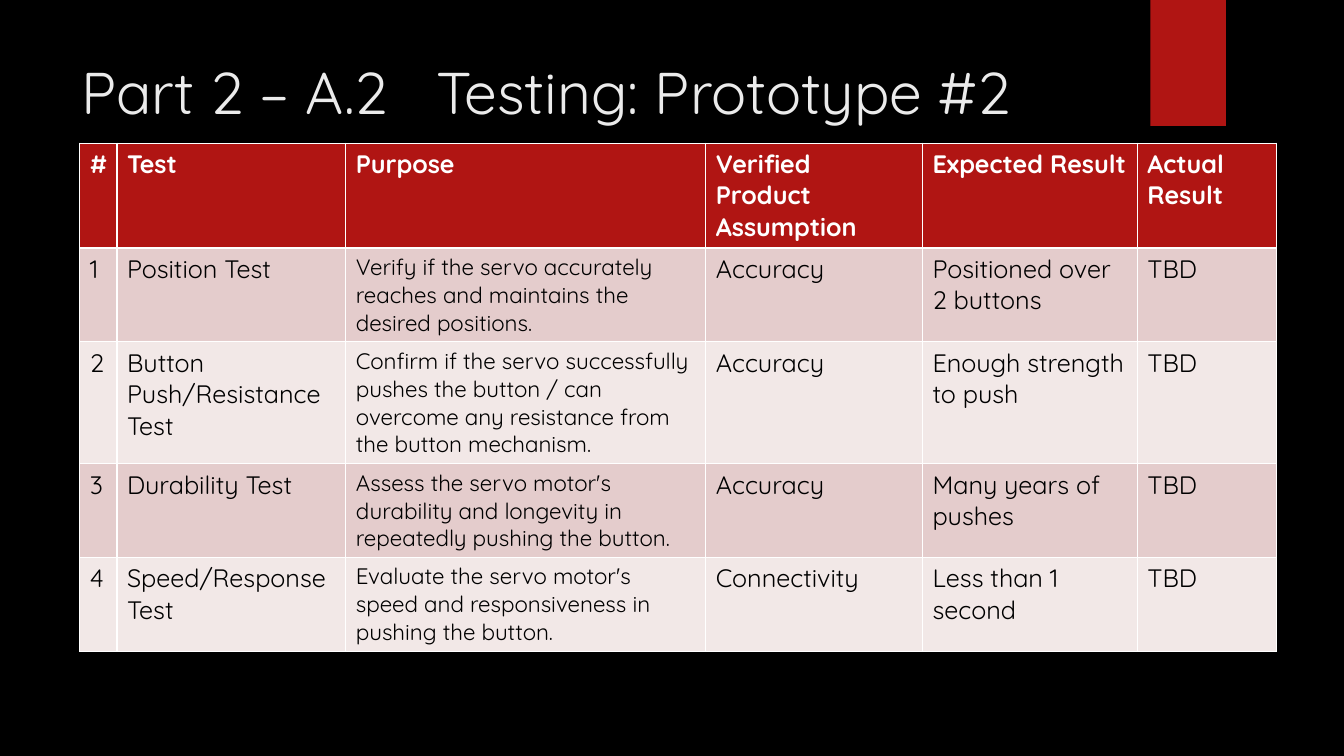
import pptx
import pptx.dml.color
import pptx.enum.shapes
import pptx.enum.text
import pptx.util
from pptx.util import Inches

FONT = "Quicksand"
RED = "B01513"
BANDS = ["E4CCCC", "F2E8E7"]
PURPOSE_COLUMN = 2

column_widths = [0.37, 2.27, 3.57, 2.15, 2.13, 1.38]
row_heights = [1.04, 0.93, 1.21, 0.93, 0.93]
rows = [
    ["#", "Test", "Purpose", "Verified Product Assumption", "Expected Result", "Actual Result"],
    ["1", "Position Test",
     "Verify if the servo accurately reaches and maintains the desired positions.",
     "Accuracy", "Positioned over 2 buttons", "TBD"],
    ["2", "Button Push/Resistance Test",
     "Confirm if the servo successfully pushes the button / can overcome any resistance "
     "from the button mechanism.",
     "Accuracy", "Enough strength to push", "TBD"],
    ["3", "Durability Test",
     "Assess the servo motor's durability and longevity in repeatedly pushing the button.",
     "Accuracy", "Many years of pushes", "TBD"],
    ["4", "Speed/Response Test",
     "Evaluate the servo motor's speed and responsiveness in pushing the button.",
     "Connectivity", "Less than 1 second", "TBD"],
]


def set_fill(target, color):
    target.fill.solid()
    target.fill.fore_color.rgb = pptx.dml.color.RGBColor.from_string(color)


def set_font(paragraph, size, color, bold=False):
    paragraph.font.name = FONT
    paragraph.font.size = pptx.util.Pt(size)
    paragraph.font.bold = bold
    paragraph.font.color.rgb = pptx.dml.color.RGBColor.from_string(color)


deck = pptx.Presentation()
deck.slide_width = Inches(13.33)
deck.slide_height = Inches(7.5)
slide = deck.slides.add_slide(deck.slide_layouts.get_by_name("Title Only"))
set_fill(slide.background, "000000")

ribbon = slide.shapes.add_shape(
    pptx.enum.shapes.MSO_SHAPE.RECTANGLE, Inches(11.41), 0, Inches(0.75), Inches(1.25))
ribbon.shadow.inherit = False
set_fill(ribbon, RED)
ribbon.line.fill.background()

title = slide.shapes.title
title.left, title.top = Inches(0.71), Inches(0.5)
title.width, title.height = Inches(10.29), Inches(1.53)
title.text_frame.text = "Part 2 – A.2   Testing: Prototype #2"
title.text_frame.vertical_anchor = pptx.enum.text.MSO_ANCHOR.TOP
title.text_frame.auto_size = pptx.enum.text.MSO_AUTO_SIZE.NONE
heading = title.text_frame.paragraphs[0]
heading.alignment = pptx.enum.text.PP_ALIGN.LEFT
set_font(heading, 42, "EBEBEB")

# The default table style supplies the white rules and the thick one below the header.
table = slide.shapes.add_table(
    len(rows), len(column_widths), Inches(0.79), Inches(1.42),
    Inches(sum(column_widths)), Inches(sum(row_heights))).table
for column, width in zip(table.columns, column_widths):
    column.width = Inches(width)
for row, height in zip(table.rows, row_heights):
    row.height = Inches(height)

for row_index, texts in enumerate(rows):
    is_header = row_index == 0
    for column_index, text in enumerate(texts):
        cell = table.cell(row_index, column_index)
        cell.text = text
        set_fill(cell, RED if is_header else BANDS[(row_index - 1) % 2])
        size = 16 if column_index == PURPOSE_COLUMN and not is_header else 18
        set_font(cell.text_frame.paragraphs[0], size,
                 "FFFFFF" if is_header else "000000", bold=is_header)

deck.save("out.pptx")
